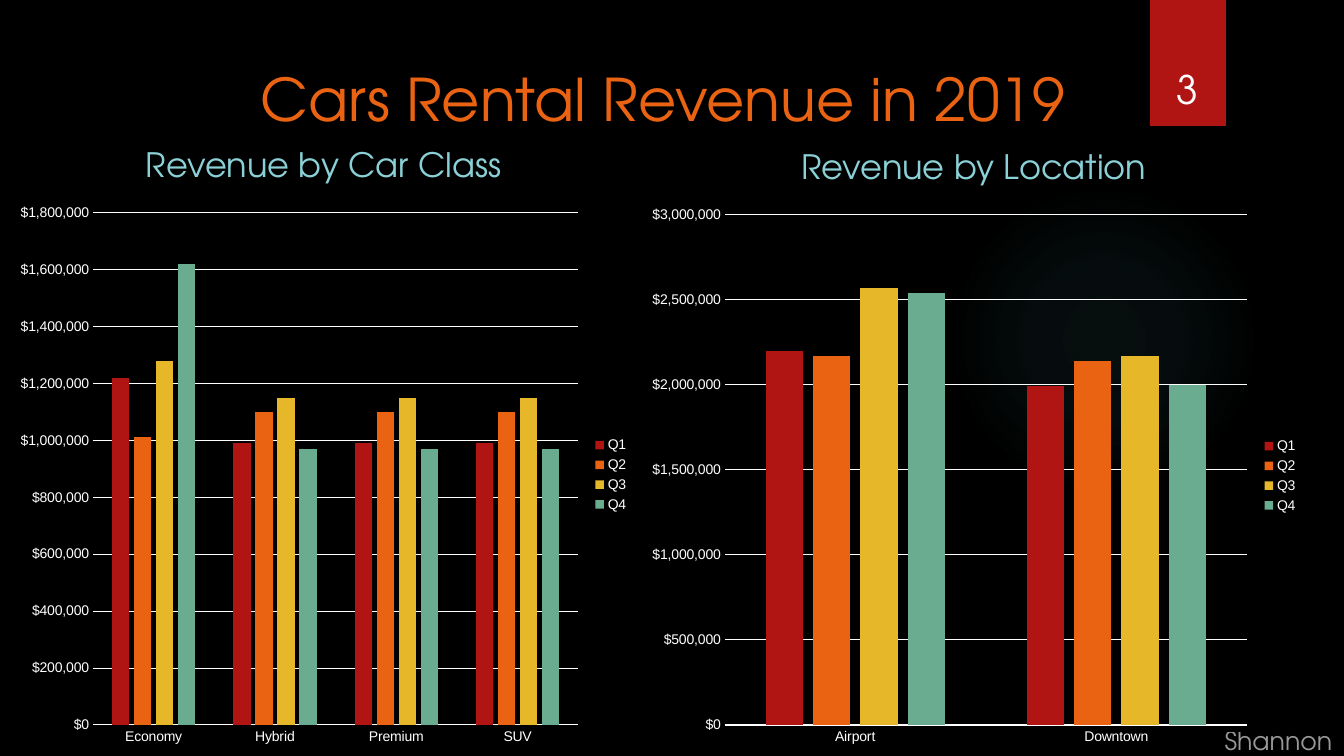
from lxml import etree
from pptx import Presentation
from pptx import util as u
from pptx.chart.data import CategoryChartData
from pptx.dml.color import RGBColor
from pptx.enum import chart as ch
from pptx.enum import shapes, text
from pptx.oxml import parse_xml
from pptx.oxml.ns import nsdecls, qn

SLIDE_W, SLIDE_H = u.Inches(13.333), u.Inches(7.5)
HEADING_FONT, CHART_FONT = "TeX Gyre Adventor", "Arial"
WHITE, RED, ORANGE, AQUA, GLOW = "FFFFFF", "B01513", "EA6312", "8AD0D6", "50B9C1"
QUARTER_COLOURS = {"Q1": RED, "Q2": ORANGE, "Q3": "E6B729", "Q4": "6AAC90"}

# Left and width of each chart column, then tops of heading and chart (% of slide)
PANELS = [
    ("Revenue by Car Class", (0.6, 46.95, 16.67, 25.6),
     ["Economy", "Hybrid", "Premium", "SUV"],
     [[1220000] + [990000] * 3, [1010000] + [1100000] * 3,
      [1280000] + [1150000] * 3, [1620000] + [970000] * 3], 1800000, 200000),
    ("Revenue by Location", (47.55, 49.8, 16.93, 25.87),
     ["Airport", "Downtown"],
     [[2200000, 1990000], [2170000, 2140000],
      [2570000, 2170000], [2540000, 2000000]], 3000000, 500000),
]


def rgb(colour):
    return RGBColor.from_string(colour)


def area(left, top, width, height):
    """Turn percentages of the slide into a position and size."""
    return [int(share * side / 100) for share, side in
            ((left, SLIDE_W), (top, SLIDE_H), (width, SLIDE_W), (height, SLIDE_H))]


def set_font(font, size, colour, name):
    font.size, font.name = u.Pt(size), name
    font.color.rgb = rgb(colour)


def add_block(slide, kind, place, colour):
    block = slide.shapes.add_shape(kind, *area(*place))
    block.shadow.inherit = False
    block.line.fill.background()
    block.fill.solid()
    block.fill.fore_color.rgb = rgb(colour)
    return block


def add_glow(slide):
    glow = add_block(slide, shapes.MSO_SHAPE.OVAL, (70.58, 24.4, 23.1, 41.07), GLOW)
    stops = "".join(
        f'<a:gs pos="{place * 1000}"><a:srgbClr val="{GLOW}">'
        f'<a:alpha val="{opacity * 1000}"/></a:srgbClr></a:gs>'
        for place, opacity in ((0, 7), (36, 6), (69, 0), (100, 0)))
    gradient = parse_xml(
        f'<a:gradFill {nsdecls("a")} rotWithShape="1"><a:gsLst>{stops}</a:gsLst>'
        '<a:path path="circle"><a:fillToRect l="50000" t="50000" r="50000" b="50000"/>'
        '</a:path></a:gradFill>')
    solid = glow.fill._xPr.find(qn("a:solidFill"))
    solid.getparent().replace(solid, gradient)


def add_label(slide, words, place, size, colour=WHITE,
              align=text.PP_ALIGN.CENTER, anchor=text.MSO_ANCHOR.BOTTOM):
    frame = slide.shapes.add_textbox(*area(*place)).text_frame
    frame.word_wrap = True
    frame.vertical_anchor = anchor
    label = frame.paragraphs[0]
    label.text, label.alignment = words, align
    set_font(label.font, size, colour, HEADING_FONT)
    return label


def add_author(slide):
    author = add_label(slide, "Shannon", (90.38, 96.27, 9.62, 4.4), 18,
                       align=text.PP_ALIGN.LEFT)
    for white in author.font._element.iter(qn("a:srgbClr")):
        etree.SubElement(white, qn("a:alpha"), val="60000")


def style_axis(axis):
    axis.major_tick_mark = axis.minor_tick_mark = ch.XL_TICK_MARK.NONE
    set_font(axis.tick_labels.font, 10, WHITE, CHART_FONT)


def white_line(line):
    line.color.rgb = rgb(WHITE)
    line.width = u.Pt(0.75)


def add_revenue_chart(slide, place, categories, revenue, top_value, step):
    data = CategoryChartData(number_format='"$"#,##0')
    data.categories = categories
    for quarter, values in zip(QUARTER_COLOURS, revenue):
        data.add_series(quarter, values)
    chart = slide.shapes.add_chart(
        ch.XL_CHART_TYPE.COLUMN_CLUSTERED, *area(*place), data).chart
    set_font(chart.font, 10, WHITE, HEADING_FONT)
    chart.has_title = False

    bars = chart.plots[0]
    bars.gap_width, bars.overlap, bars.vary_by_categories = 219, -27, False
    for series in bars.series:
        series.format.fill.solid()
        series.format.fill.fore_color.rgb = rgb(QUARTER_COLOURS[series.name])

    style_axis(chart.category_axis)
    white_line(chart.category_axis.format.line)
    dollars = chart.value_axis
    style_axis(dollars)
    dollars.format.line.fill.background()
    dollars.has_major_gridlines = True
    white_line(dollars.major_gridlines.format.line)
    dollars.minimum_scale, dollars.maximum_scale = 0, top_value
    dollars.major_unit = step
    dollars.tick_labels.number_format = '"$"#,##0'
    dollars.tick_labels.number_format_is_linked = False

    chart.has_legend = True
    chart.legend.position = ch.XL_LEGEND_POSITION.RIGHT
    chart.legend.include_in_layout = False
    set_font(chart.legend.font, 10, WHITE, CHART_FONT)


def main():
    deck = Presentation()
    deck.slide_width, deck.slide_height = SLIDE_W, SLIDE_H
    slide = deck.slides.add_slide(deck.slide_layouts[6])
    slide.background.fill.solid()
    slide.background.fill.fore_color.rgb = rgb("000000")

    add_glow(slide)
    add_block(slide, shapes.MSO_SHAPE.RECTANGLE, (85.58, 0, 5.63, 16.67), RED)
    add_label(slide, "Cars Rental Revenue in 2019", (14.7, 6.8, 69.23, 12.27), 42,
              ORANGE, anchor=text.MSO_ANCHOR.MIDDLE)
    for heading, (left, width, heading_top, chart_top), *figures in PANELS:
        add_label(slide, heading, (left, heading_top, width, 8.4), 24, AQUA)
        add_revenue_chart(slide, (left, chart_top, width, 100 - chart_top), *figures)
    add_author(slide)
    add_label(slide, "3", (84.9, 4.27, 6.9, 11.2), 28)
    deck.save("out.pptx")


if __name__ == "__main__":
    main()
